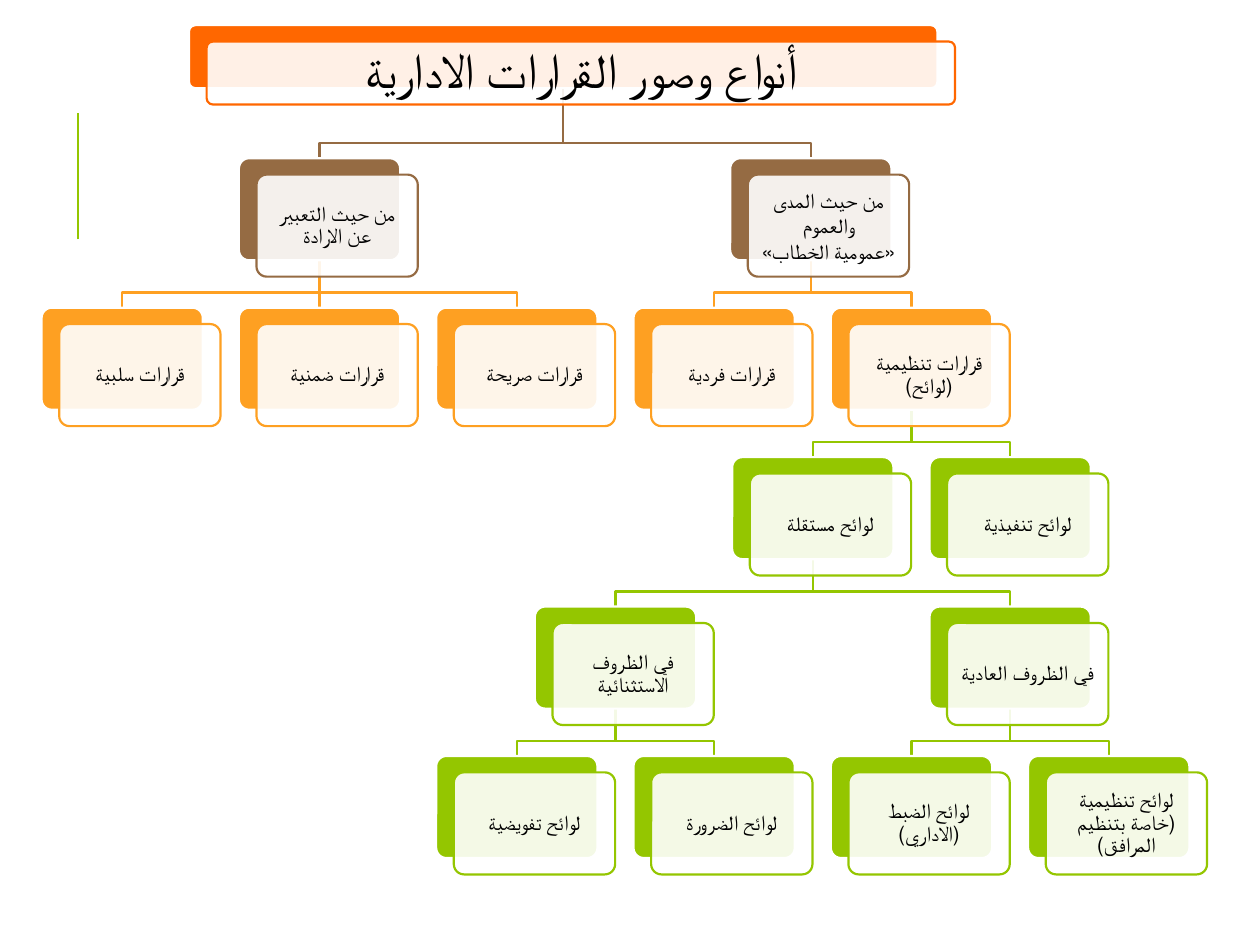
from dataclasses import dataclass

from lxml import etree
from pptx import Presentation
from pptx.dml.color import RGBColor
from pptx.enum.shapes import MSO_CONNECTOR, MSO_SHAPE
from pptx.enum.text import MSO_ANCHOR, PP_ALIGN
from pptx.oxml.ns import qn
from pptx.util import Inches, Pt

ROUNDED = MSO_SHAPE.ROUNDED_RECTANGLE
STRAIGHT = MSO_CONNECTOR.STRAIGHT
MIDDLE = MSO_ANCHOR.MIDDLE
CENTER = PP_ALIGN.CENTER


@dataclass(frozen=True)
class Theme:
    font: str = "Calibri"
    text: str = "000000"
    card: str = "FFFFFF"
    accent: str = "94C600"
    # One colour for each level of the tree
    levels: tuple = ("FF6700", "956B43", "FEA022", "94C600", "94C600", "94C600")
    title_size: int = 28
    node_size: int = 12
    outline: float = 1.25
    accent_line: float = 1.5


THEME = Theme()

# Layout of the tree, in inches
FIRST_CENTER, COLUMN_STEP = 0.97, 1.566
FIRST_TOP, LEVEL_STEP = 1.256, 1.186
NODE_SIZE, TITLE_SIZE = (1.28, 0.81), (5.94, 0.5)
TITLE_TOP = 0.2
CARD_SHIFT = (0.14, 0.13)
TEXT_MARGIN = 0.02
BEND_RISE = 0.12


@dataclass(frozen=True)
class Node:
    column: float
    lines: tuple
    children: tuple = ()
    spacing: float = 0.9


NORMAL_TIMES = Node(4.5, ("في الظروف العادية",), (
    Node(5, ("لوائح تنظيمية (خاصة بتنظيم المرافق)",)),
    Node(4, ("لوائح الضبط (الاداري)",)),
))
EXCEPTIONAL_TIMES = Node(2.5, ("في الظروف الاستثنائية",), (
    Node(3, ("لوائح الضرورة",)),
    Node(2, ("لوائح تفويضية",)),
))
REGULATIONS = Node(4, ("قرارات تنظيمية (لوائح)",), (
    Node(4.5, ("لوائح تنفيذية",)),
    Node(3.5, ("لوائح مستقلة",), (NORMAL_TIMES, EXCEPTIONAL_TIMES)),
))
BY_SCOPE = Node(3.49, ("من حيث المدى والعموم", "«عمومية الخطاب»"), (
    REGULATIONS,
    Node(3, ("قرارات فردية",)),
), spacing=1.0)
BY_EXPRESSION = Node(1, ("من حيث التعبير عن الارادة",), (
    Node(2, ("قرارات صريحة",)),
    Node(1, ("قرارات ضمنية",)),
    Node(0, ("قرارات سلبية",)),
))
DECISIONS = Node(2.235, ("أنواع وصور القرارات الادارية",), (BY_SCOPE, BY_EXPRESSION))


def rgb(color):
    return RGBColor.from_string(color)


def walk(node, level=0):
    yield node, level
    for child in node.children:
        yield from walk(child, level + 1)


def node_frame(node, level):
    """Centre, top, width and height of a node's back plate."""
    center = FIRST_CENTER + COLUMN_STEP * node.column
    if level == 0:
        return center, TITLE_TOP, *TITLE_SIZE
    return center, FIRST_TOP + LEVEL_STEP * (level - 1), *NODE_SIZE


def add_accent_line(slide):
    accent = slide.shapes.add_connector(
        STRAIGHT, Inches(0.62), Inches(1.9), Inches(0.62), Inches(0.9))
    accent.line.color.rgb = rgb(THEME.accent)
    accent.line.width = Pt(THEME.accent_line)
    etree.SubElement(accent._element.spPr, qn("a:effectLst"))


def add_branch(slide, parent, child, level):
    start, top, _, height = node_frame(parent, level)
    end, child_top, _, _ = node_frame(child, level + 1)
    points = [(end, child_top)]
    if start != end:
        bend = child_top - BEND_RISE
        points = [(start, bend), (end, bend)] + points
    builder = slide.shapes.build_freeform(Inches(start), Inches(top + height))
    builder.add_line_segments([(Inches(x), Inches(y)) for x, y in points], close=False)
    branch = builder.convert_to_shape()
    branch.shadow.inherit = False
    branch.fill.background()
    branch.line.color.rgb = rgb(THEME.levels[level + 1])
    branch.line.width = Pt(THEME.outline)


def add_plate(slide, left, top, width, height, fill, outline):
    plate = slide.shapes.add_shape(
        ROUNDED, Inches(left), Inches(top), Inches(width), Inches(height))
    plate.adjustments[0] = 0.1
    plate.shadow.inherit = False
    plate.fill.solid()
    plate.fill.fore_color.rgb = rgb(fill)
    plate.line.color.rgb = rgb(outline)
    plate.line.width = Pt(THEME.outline)
    return plate


def make_translucent(plate, percent):
    color = plate._element.spPr.find(qn("a:solidFill"))[0]
    etree.SubElement(color, qn("a:alpha")).set("val", str(percent * 1000))


def add_label(slide, left, top, width, height, node, size, inset):
    label = slide.shapes.add_textbox(
        Inches(left), Inches(top), Inches(width), Inches(height))
    frame = label.text_frame
    frame.word_wrap = True
    frame.vertical_anchor = MIDDLE
    frame.margin_left = frame.margin_right = Inches(inset)
    frame.margin_top = frame.margin_bottom = Inches(inset)
    for index, line in enumerate(node.lines):
        paragraph = frame.add_paragraph() if index else frame.paragraphs[0]
        paragraph.alignment = CENTER
        paragraph.line_spacing = node.spacing
        paragraph._p.get_or_add_pPr().set("rtl", "1")
        run = paragraph.add_run()
        run.text = line
        run.font.size = Pt(size)
        run.font.name = THEME.font
        run.font.color.rgb = rgb(THEME.text)


def add_node(slide, node, level):
    center, top, width, height = node_frame(node, level)
    left, color = center - width / 2, THEME.levels[level]
    add_plate(slide, left, top, width, height, color, THEME.card)

    left, top = left + CARD_SHIFT[0], top + CARD_SHIFT[1]
    card = add_plate(slide, left, top, width, height, THEME.card, color)
    make_translucent(card, 90)

    size, inset = (THEME.node_size, 0.05) if level else (THEME.title_size, 0.12)
    add_label(slide, left + TEXT_MARGIN, top + TEXT_MARGIN,
              width - 2 * TEXT_MARGIN, height - 2 * TEXT_MARGIN, node, size, inset)


def main():
    prs = Presentation()
    prs.slide_width, prs.slide_height = Inches(10), Inches(7.5)
    slide = prs.slides.add_slide(prs.slide_layouts[6])
    add_accent_line(slide)

    # Branches lie behind all nodes
    for node, level in walk(DECISIONS):
        for child in node.children:
            add_branch(slide, node, child, level)

    for node, level in walk(DECISIONS):
        add_node(slide, node, level)

    prs.save("out.pptx")


if __name__ == "__main__":
    main()
